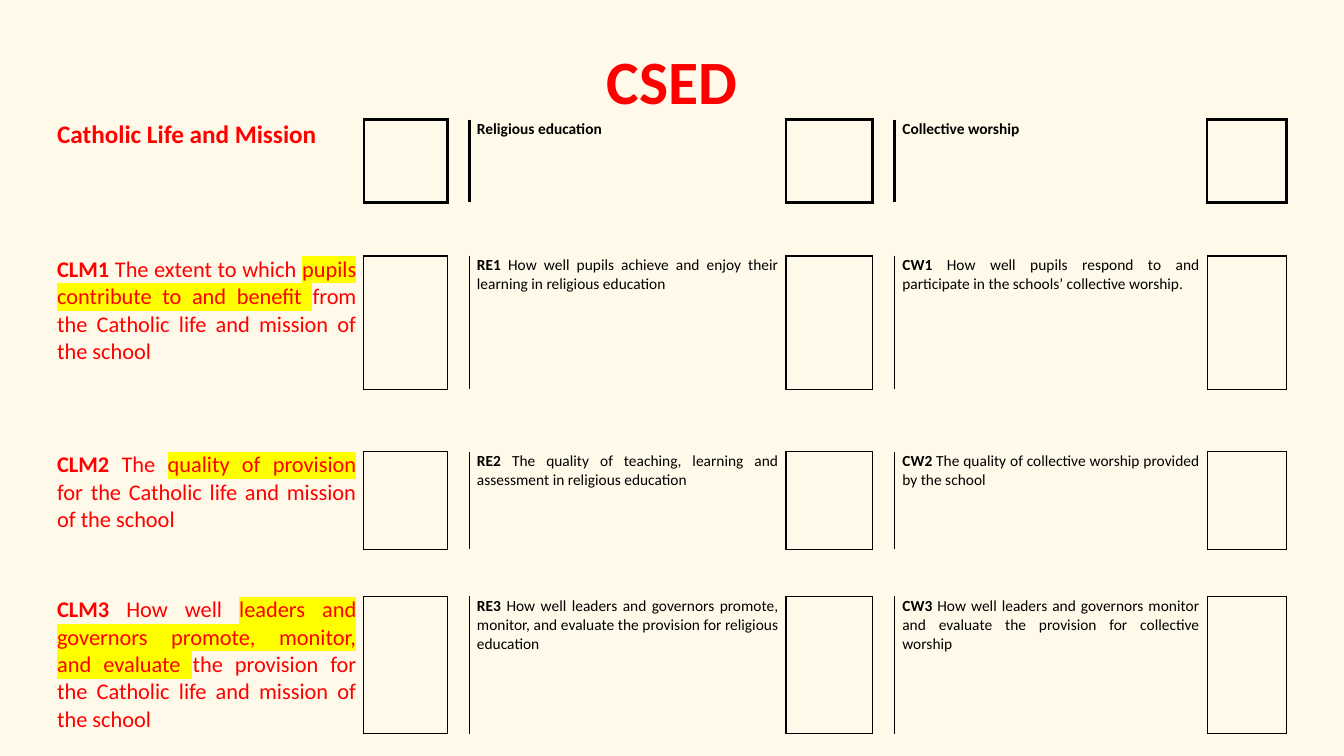
from lxml import etree
from pptx import Presentation
from pptx.dml.color import RGBColor
from pptx.enum.text import MSO_ANCHOR, PP_ALIGN
from pptx.oxml.ns import qn
from pptx.util import Cm, Pt

RED, BLACK, YELLOW, CREAM = "FF0000", "000000", "FFFF00", "FFF9E9"
NO_STYLE = "{2D5ABB26-0587-4C30-8999-92F81FD0307C}"
COLUMN_WIDTHS = [7.92, 2.1, 0.56, 7.98, 2.18, 0.56, 7.87, 2.01]
ROW_HEIGHTS = [2.08, 1.35, 3.36, 1.57, 2.46, 1.19, 3.46]
SIDES = [("lnL", 0, -1), ("lnR", 0, 1), ("lnT", -1, 0), ("lnB", 1, 0)]
BOXES = {(row, column) for row in range(0, 7, 2) for column in (1, 4, 7)}

HEADINGS = ["Catholic Life and Mission", "Religious education", "Collective worship"]
CRITERIA = [
    [
        ("CLM1", " The extent to which ", "pupils contribute to and benefit ",
         "from the Catholic life and mission of the school"),
        ("RE1", " How well pupils achieve and enjoy their learning in religious education"),
        ("CW1", " How well pupils respond to and participate in the schools’ collective worship."),
    ],
    [
        ("CLM2", " The ", "quality of provision ",
         "for the Catholic life and mission of the school"),
        ("RE2", " The quality of teaching, learning and assessment in religious education"),
        ("CW2", " The quality of collective worship provided by the school"),
    ],
    [
        ("CLM3", " How well ", "leaders and governors promote, monitor, and evaluate ",
         "the provision for the Catholic life and mission of the school"),
        ("RE3", " How well leaders and governors promote, monitor, and evaluate "
                "the provision for religious education"),
        ("CW3", " How well leaders and governors monitor and evaluate "
                "the provision for collective worship"),
    ],
]


def color(hex_value):
    return RGBColor.from_string(hex_value)


def write_text(para, parts, size, hex_value, align):
    para.alignment = align
    para.font.name = "Calibri"
    para.font.size = Pt(size)
    para.font.color.rgb = color(hex_value)
    for index, part in enumerate(parts):
        span = para.add_run()
        span.text = part
        span.font.bold = index == 0
        if index == 2:
            highlight = etree.SubElement(span.font._element, qn("a:highlight"))
            etree.SubElement(highlight, qn("a:srgbClr"), val=YELLOW)


deck = Presentation()
deck.slide_width, deck.slide_height = Cm(33.87), Cm(19.05)
page = deck.slides.add_slide(deck.slide_layouts[6])
page.background.fill.solid()
page.background.fill.fore_color.rgb = color(CREAM)

title = page.shapes.add_textbox(Cm(2.33), Cm(1.01), Cm(29.21), Cm(2.26)).text_frame
title.word_wrap = True
title.vertical_anchor = MSO_ANCHOR.MIDDLE
title.paragraphs[0].line_spacing = 0.9
write_text(title.paragraphs[0], ["CSED"], 44, RED, PP_ALIGN.CENTER)

frame = page.shapes.add_table(
    len(ROW_HEIGHTS), len(COLUMN_WIDTHS), Cm(1.25), Cm(3.02),
    Cm(sum(COLUMN_WIDTHS)), Cm(sum(ROW_HEIGHTS)))
table = frame.table
table.first_row = table.horz_banding = False
table._tbl.tblPr.find(qn("a:tableStyleId")).text = NO_STYLE
for column, width in zip(table.columns, COLUMN_WIDTHS):
    column.width = Cm(width)
for row, height in zip(table.rows, ROW_HEIGHTS):
    row.height = Cm(height)

for row in range(len(ROW_HEIGHTS)):
    for column in range(len(COLUMN_WIDTHS)):
        cell = table.cell(row, column)
        cell.margin_left = cell.margin_right = Cm(0.19)
        cell.margin_top = cell.margin_bottom = Cm(0)
        properties = cell._tc.get_or_add_tcPr()
        for side, down, right in SIDES:
            neighbour = (row + down, column + right)
            edge_box = next((spot for spot in ((row, column), neighbour) if spot in BOXES), None)
            if edge_box:
                width = Pt(2.25 if edge_box[0] == 0 else 1)
                border = etree.SubElement(properties, qn(f"a:{side}"), w=str(width))
                fill = etree.SubElement(border, qn("a:solidFill"))
                etree.SubElement(fill, qn("a:srgbClr"), val=BLACK)
        cell.fill.background()

for level, entries in enumerate([[(heading,) for heading in HEADINGS]] + CRITERIA):
    for area, parts in enumerate(entries):
        size, hex_value = (11, BLACK) if area else (16 if level else 18, RED)
        para = table.cell(level * 2, area * 3).text_frame.paragraphs[0]
        write_text(para, parts, size, hex_value, PP_ALIGN.JUSTIFY)

deck.save("out.pptx")
